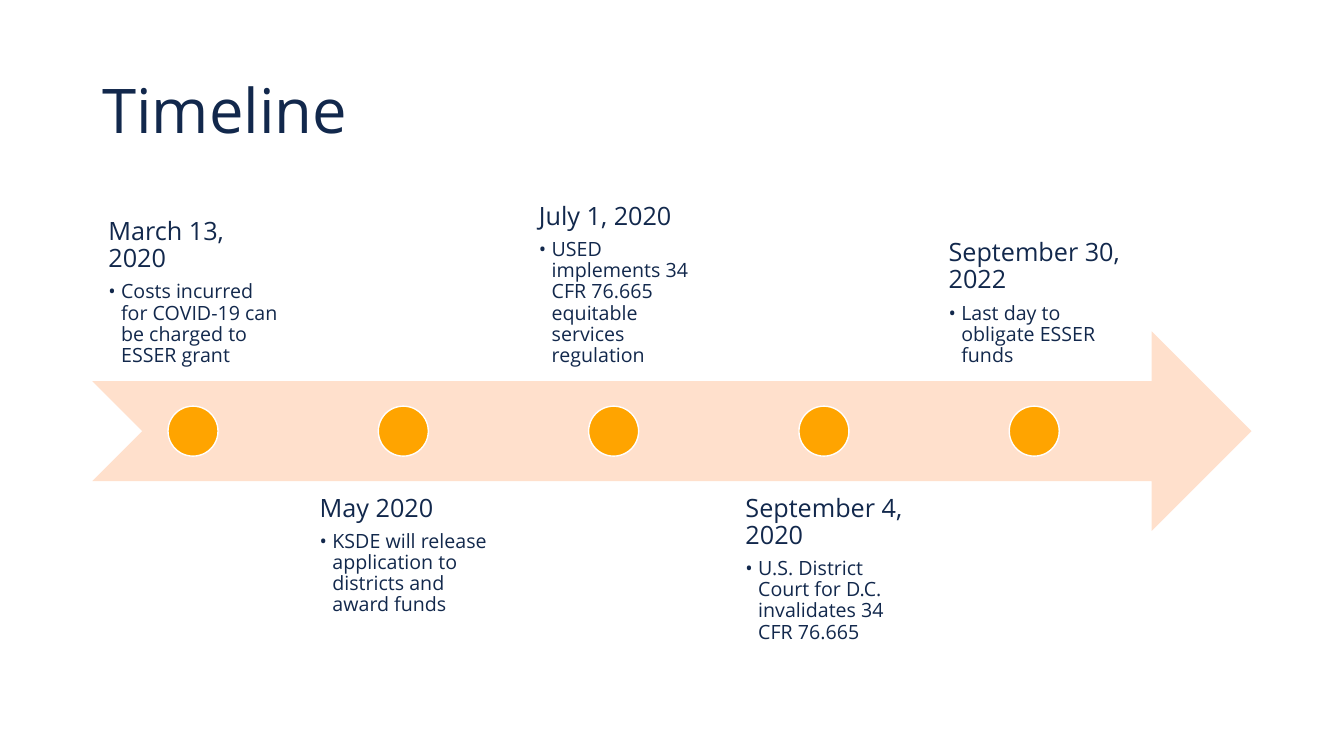
from dataclasses import dataclass

from lxml import etree
from pptx import Presentation
from pptx import util as u
from pptx.dml.color import RGBColor
from pptx.enum import shapes, text
from pptx.oxml.ns import qn
from pptx.shapes.autoshape import Shape
from pptx.slide import Slide

NAVY = RGBColor(0x12, 0x28, 0x4C)
ORANGE = RGBColor(0xFF, 0xA4, 0x00)
PEACH = RGBColor(0xFF, 0xE0, 0xCC)
WHITE = RGBColor(0xFF, 0xFF, 0xFF)
FONT = "Open Sans"
LINE_SPACING = 0.9

LEFT, ARROW_WIDTH = 2.33, 29.21
ARROW_TOP, ARROW_HEIGHT = 8.35, 5.03
MIDDLE = ARROW_TOP + ARROW_HEIGHT / 2
FIRST_LABEL, STEP = 2.34, 5.3
BOX_WIDTH = 5.05
ABOVE_TOP, BELOW_TOP = 4.57, 12.12
DOT = 1.26
INSET = 0.36
INDENT = 0.32


@dataclass(frozen=True)
class Milestone:
    date: str
    event: str


MILESTONES = [
    Milestone("March 13, 2020", "Costs incurred for COVID-19 can be charged to ESSER grant"),
    Milestone("May 2020", "KSDE will release application to districts and award funds"),
    Milestone("July 1, 2020", "USED implements 34 CFR 76.665 equitable services regulation"),
    Milestone("September 4, 2020", "U.S. District Court for D.C. invalidates 34 CFR 76.665"),
    Milestone("September 30, 2022", "Last day to obligate ESSER funds"),
]


def add_run(p, words: str, size: float) -> None:
    p.line_spacing = LINE_SPACING
    r = p.add_run()
    r.text = words
    r.font.name = FONT
    r.font.size = u.Pt(size)
    r.font.color.rgb = NAVY


def add_bullet(p) -> None:
    pPr = p._p.get_or_add_pPr()
    pPr.set("marL", str(u.Cm(INDENT)))
    pPr.set("indent", str(-u.Cm(INDENT)))
    etree.SubElement(pPr, qn("a:buFont")).set("typeface", FONT)
    etree.SubElement(pPr, qn("a:buChar")).set("char", "•")


def add_filled(s: Slide, kind: shapes.MSO_SHAPE, left: float, top: float,
               width: float, height: float, color: RGBColor) -> Shape:
    sp = s.shapes.add_shape(kind, u.Cm(left), u.Cm(top), u.Cm(width), u.Cm(height))
    sp.shadow.inherit = False
    sp.fill.solid()
    sp.fill.fore_color.rgb = color
    sp.line.fill.background()
    return sp


def add_dot(s: Slide, center: float) -> None:
    sp = add_filled(s, shapes.MSO_SHAPE.OVAL, center - DOT / 2, MIDDLE - DOT / 2,
                    DOT, DOT, ORANGE)
    sp.line.color.rgb = WHITE
    sp.line.width = u.Pt(1)


def add_label(s: Slide, item: Milestone, left: float, above: bool) -> None:
    sp = s.shapes.add_textbox(u.Cm(left), u.Cm(ABOVE_TOP if above else BELOW_TOP),
                              u.Cm(BOX_WIDTH), u.Cm(ARROW_HEIGHT))
    tf = sp.text_frame
    tf.word_wrap = True
    tf.vertical_anchor = text.MSO_ANCHOR.BOTTOM if above else text.MSO_ANCHOR.TOP
    tf.margin_left = tf.margin_right = tf.margin_top = tf.margin_bottom = u.Cm(INSET)
    tf._txBody.bodyPr.set("anchorCtr", "1")
    p = tf.paragraphs[0]
    p.space_after = u.Pt(6.3)
    add_run(p, item.date, 18)
    p = tf.add_paragraph()
    p.level = 1
    add_bullet(p)
    add_run(p, item.event, 14)


def add_title(s: Slide, words: str) -> None:
    sp = s.shapes.add_textbox(u.Cm(LEFT), u.Cm(1.01), u.Cm(ARROW_WIDTH), u.Cm(3.68))
    tf = sp.text_frame
    tf.word_wrap = True
    tf.vertical_anchor = text.MSO_ANCHOR.MIDDLE
    add_run(tf.paragraphs[0], words, 44)


def main() -> None:
    prs = Presentation()
    prs.slide_width, prs.slide_height = u.Cm(33.87), u.Cm(19.05)
    s = prs.slides.add_slide(prs.slide_layouts[6])
    add_filled(s, shapes.MSO_SHAPE.NOTCHED_RIGHT_ARROW, LEFT, ARROW_TOP,
               ARROW_WIDTH, ARROW_HEIGHT, PEACH)
    for i, item in enumerate(MILESTONES):
        left = FIRST_LABEL + i * STEP
        add_label(s, item, left, above=i % 2 == 0)
        add_dot(s, left + BOX_WIDTH / 2)
    add_title(s, "Timeline")
    prs.save("out.pptx")


if __name__ == "__main__":
    main()
